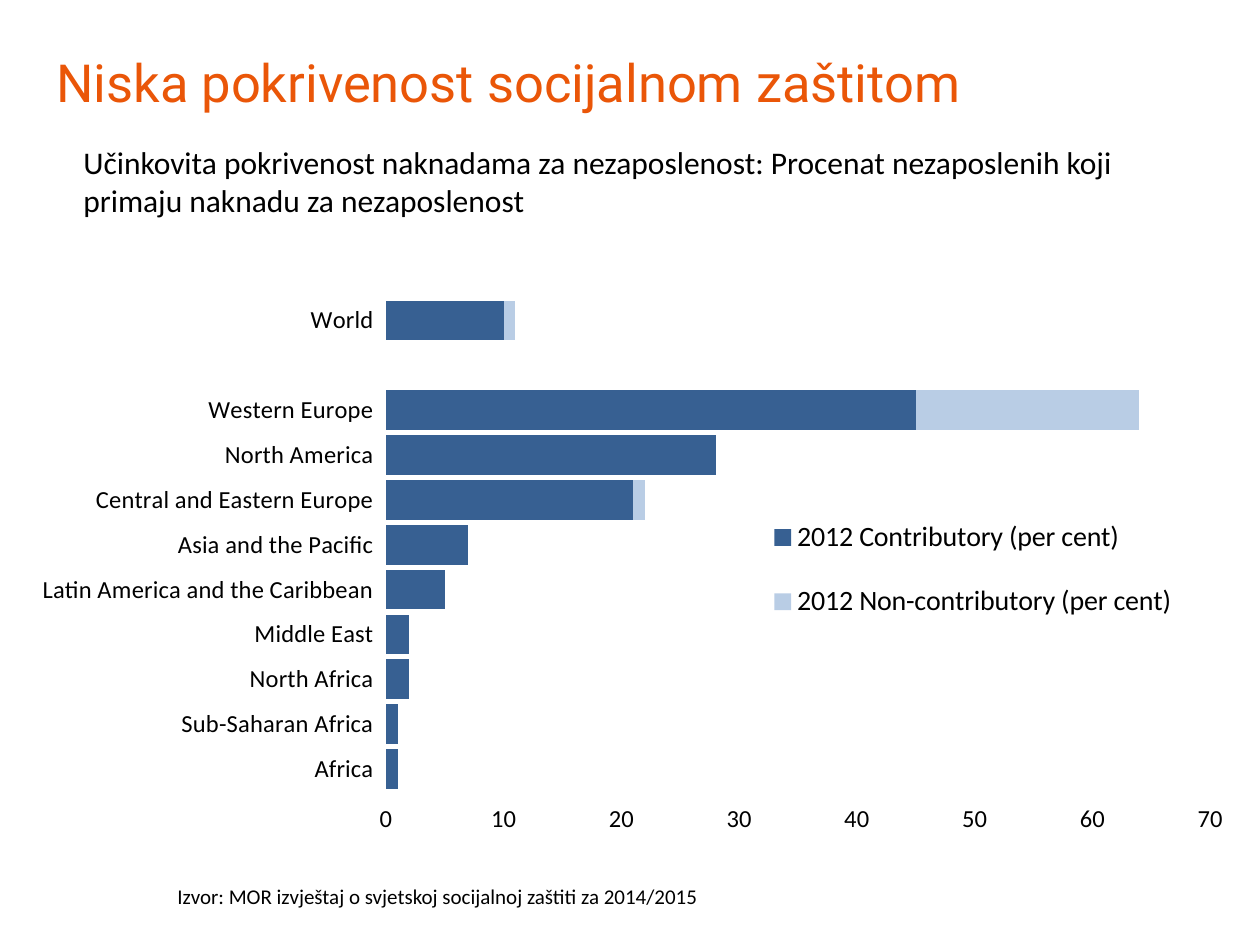
import pptx
import pptx.chart.data
import pptx.dml.color
import pptx.enum.chart
import pptx.enum.text
import pptx.oxml
import pptx.oxml.ns
import pptx.util

PX = 914400 / 126
RGB = pptx.dml.color.RGBColor
ORANGE = RGB(0xEA, 0x56, 0x08)
BLACK = RGB(0, 0, 0)
WHITE = RGB(255, 255, 255)
NAVY = RGB(0x37, 0x60, 0x92)
PALE_BLUE = RGB(0xB9, 0xCD, 0xE5)

REGIONS = [
    ("Africa", 1, 0),
    ("Sub-Saharan Africa", 1, 0),
    ("North Africa", 2, 0),
    ("Middle East", 2, 0),
    ("Latin America and the Caribbean", 5, 0),
    ("Asia and the Pacific", 7, 0),
    ("Central and Eastern Europe", 21, 1),
    ("North America", 28, 0),
    ("Western Europe", 45, 19),
    ("", None, None),
    ("World", 10, 1),
]
SERIES = [
    ("2012 Contributory (per cent)", NAVY),
    ("2012 Non-contributory (per cent)", PALE_BLUE),
]


def emu(box):
    return [pptx.util.Emu(round(v * PX)) for v in box]


def add_text(s, box, text, size, font="Calibri", color=BLACK,
             anchor=pptx.enum.text.MSO_ANCHOR.TOP):
    tf = s.shapes.add_textbox(*emu(box)).text_frame
    tf.word_wrap = True
    tf.vertical_anchor = anchor
    r = tf.paragraphs[0].add_run()
    r.text = text
    r.font.size = pptx.util.Pt(size)
    r.font.name = font
    r.font.color.rgb = color


def set_layout(parent, index, x, y, w, h, inner=False):
    """Fix the place of a chart part, in fractions of the chart."""
    for old in parent.findall(pptx.oxml.ns.qn("c:layout")):
        parent.remove(old)
    target = '<c:layoutTarget val="inner"/>' if inner else ""
    parent.insert(index, pptx.oxml.parse_xml(
        f'<c:layout {pptx.oxml.ns.nsdecls("c")}><c:manualLayout>{target}'
        '<c:xMode val="edge"/><c:yMode val="edge"/>'
        f'<c:x val="{x}"/><c:y val="{y}"/><c:w val="{w}"/><c:h val="{h}"/>'
        '</c:manualLayout></c:layout>'))


def add_coverage_chart(s, box):
    names, *columns = zip(*REGIONS)
    data = pptx.chart.data.CategoryChartData(number_format="0")
    data.categories = names
    for (name, _), values in zip(SERIES, columns):
        data.add_series(name, values)
    chart = s.shapes.add_chart(
        pptx.enum.chart.XL_CHART_TYPE.BAR_STACKED, *emu(box), data).chart
    chart.has_title = False
    chart.font.name = "Calibri"
    chart.font.size = pptx.util.Pt(10)
    chart.font.color.rgb = BLACK

    plot = chart.plots[0]
    plot.gap_width, plot.overlap = 13, 100
    plot.vary_by_categories = False
    for series, (_, color) in zip(plot.series, SERIES):
        series.format.fill.solid()
        series.format.fill.fore_color.rgb = color

    for axis in (chart.category_axis, chart.value_axis):
        axis.tick_labels.font.size = pptx.util.Pt(14)
        axis.format.line.fill.background()
    axis = chart.value_axis
    axis.minimum_scale, axis.maximum_scale, axis.major_unit = 0, 70, 10
    axis.tick_labels.number_format = "0"
    axis.tick_labels.number_format_is_linked = False
    line = axis.major_gridlines.format.line
    line.color.rgb = WHITE
    line.width = pptx.util.Pt(0.75)

    chart.has_legend = True
    legend = chart.legend
    legend.position = pptx.enum.chart.XL_LEGEND_POSITION.RIGHT
    legend.include_in_layout = False
    legend.font.size = pptx.util.Pt(16)
    plot_area = chart.plots[0]._element.getparent()
    set_layout(plot_area, 0, 0.275, 0.148, 0.646, 0.776, inner=True)
    set_layout(legend._element, 1, 0.57, 0.45, 0.33, 0.25)


def build_slide(prs):
    s = prs.slides.add_slide(prs.slide_layouts[6])
    add_text(s, (44, 43, 1183, 77), "Niska pokrivenost socijalnom zaštitom",
             30, font="Roboto", color=ORANGE,
             anchor=pptx.enum.text.MSO_ANCHOR.MIDDLE)
    add_text(s, (71, 137, 1131, 89),
             "Učinkovita pokrivenost naknadama za nezaposlenost: Procenat "
             "nezaposlenih koji primaju naknadu za nezaposlenost", 18)
    add_coverage_chart(s, (35, 204, 1276, 636))
    add_text(s, (165, 877, 740, 38),
             "Izvor: MOR izvještaj o svjetskoj socijalnoj zaštiti za 2014/2015",
             12)


def main():
    prs = pptx.Presentation()
    prs.slide_width, prs.slide_height = emu((1260, 945))
    build_slide(prs)
    prs.save("out.pptx")


if __name__ == "__main__":
    main()
